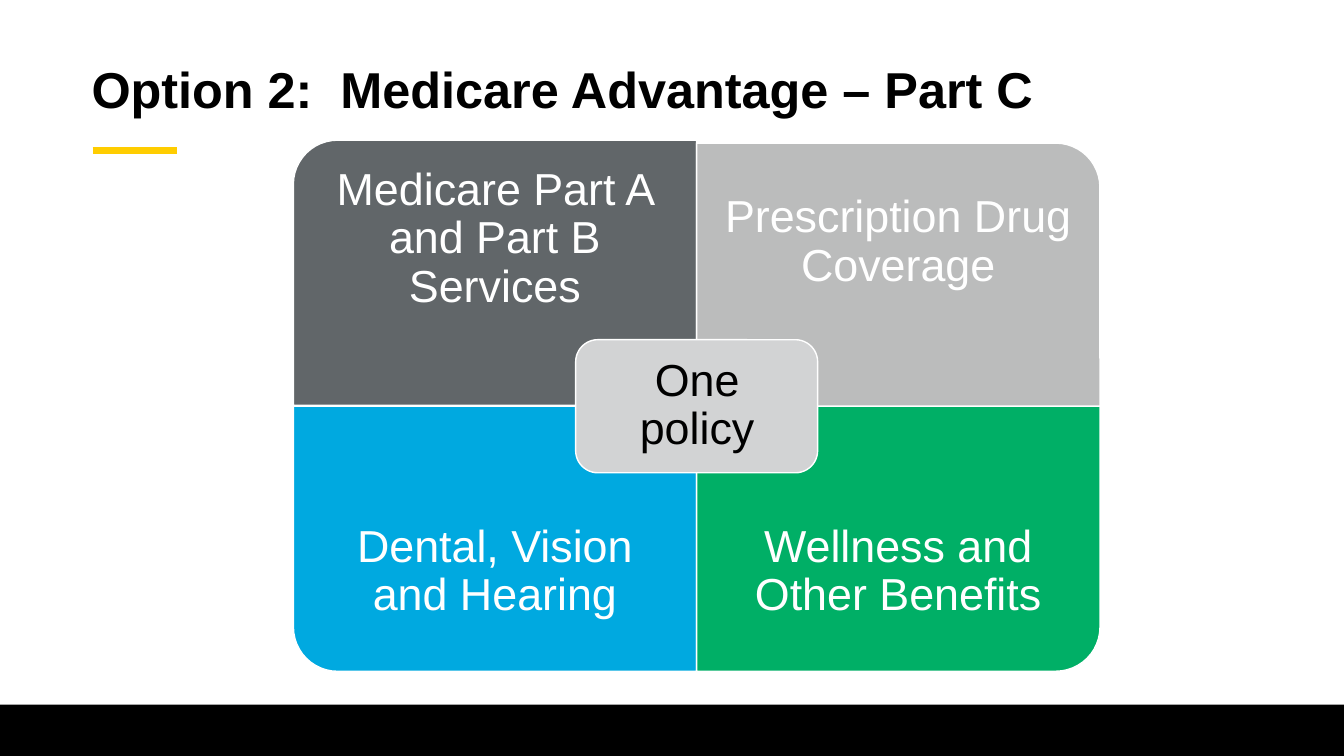
"""Builds the Medicare Advantage slide: four benefits around one policy."""
from dataclasses import dataclass

from pptx import Presentation
from pptx.dml.color import RGBColor
from pptx.enum.shapes import MSO_CONNECTOR as Connector, MSO_SHAPE as Shape
from pptx.enum.text import MSO_ANCHOR as Anchor, PP_ALIGN as Align
from pptx.oxml.ns import qn
from pptx.util import Inches, Pt


@dataclass(frozen=True)
class Theme:
    font: str = "Arial"
    title_size: int = 36
    body_size: int = 32
    black: str = "000000"
    white: str = "FFFFFF"
    yellow: str = "FFCD00"
    slate: str = "616669"
    silver: str = "BBBCBC"
    blue: str = "00A9E0"
    green: str = "00AF66"
    pale: str = "D2D3D4"


theme = Theme()
deck = Presentation()
deck.slide_width, deck.slide_height = Inches(13.33), Inches(7.5)
slide = deck.slides.add_slide(deck.slide_layouts[6])


def add_text(text, *, left, top, width, height, size=theme.body_size,
             color=theme.white, bold=False, align=Align.CENTER, inset=0.25):
    box = slide.shapes.add_textbox(Inches(left), Inches(top), Inches(width), Inches(height))
    frame = box.text_frame
    frame.word_wrap = True
    frame.vertical_anchor = Anchor.MIDDLE
    frame.margin_left = frame.margin_right = Inches(inset)
    frame.margin_top = frame.margin_bottom = Inches(min(inset, 0.25))
    paragraph = frame.paragraphs[0]
    paragraph.alignment = align
    paragraph.line_spacing = 0.9
    run = paragraph.add_run()
    run.text = text
    run.font.name, run.font.size, run.font.bold = theme.font, Pt(size), bold
    run.font.color.rgb = RGBColor.from_string(color)


def add_panel(kind, fill, left, top, width, height, outline=None, rotation=0):
    panel = slide.shapes.add_shape(kind, Inches(left), Inches(top), Inches(width), Inches(height))
    panel.shadow.inherit = False
    panel.rotation = rotation
    panel.fill.solid()
    panel.fill.fore_color.rgb = RGBColor.from_string(fill)
    if outline:
        panel.line.color.rgb = RGBColor.from_string(outline)
        panel.line.width = Pt(1)
    else:
        panel.line.fill.background()


add_panel(Shape.RECTANGLE, theme.black, 0, 6.99, 13.33, 0.51)

accent = slide.shapes.add_connector(
    Connector.STRAIGHT, Inches(0.92), Inches(1.49), Inches(1.76), Inches(1.49))
accent.line.color.rgb = RGBColor.from_string(theme.yellow)
accent.line.width = Pt(5)
accent_properties = accent._element.spPr
accent_properties.append(accent_properties.makeelement(qn("a:effectLst"), {}))

add_text("Option 2:  Medicare Advantage – Part C", left=0.81, top=0.44, width=11.5,
         height=0.95, size=theme.title_size, color=theme.black, bold=True,
         align=Align.LEFT, inset=0.1)

quadrant_width, quadrant_height, label_height = 4, 2.63, 1.97
left_column, right_column = 2.91, 6.91
benefits = [
    ("Medicare Part A and Part B Services", theme.slate, left_column, 1.39, 1.39, 270),
    ("Prescription Drug Coverage", theme.silver, right_column, 1.42, 1.42, 0),
    ("Dental, Vision and Hearing", theme.blue, left_column, 4.03, 4.69, 180),
    ("Wellness and Other Benefits", theme.green, right_column, 4.03, 4.69, 90),
]
for benefit, fill, left, top, label_top, rotation in benefits:
    sideways = rotation in (90, 270)
    shift = (quadrant_width - quadrant_height) / 2 if sideways else 0
    size = (quadrant_height, quadrant_width) if sideways else (quadrant_width, quadrant_height)
    add_panel(Shape.ROUND_1_RECTANGLE, fill, left + shift, top - shift, *size,
              outline=theme.white, rotation=rotation)
    add_text(benefit, left=left, top=label_top, width=quadrant_width, height=label_height)

add_panel(Shape.ROUNDED_RECTANGLE, theme.pale, 5.71, 3.37, 2.4, 1.32, outline=theme.white)
add_text("One policy", left=5.78, top=3.43, width=2.27, height=1.19,
         color=theme.black, inset=0.13)

deck.save("out.pptx")
